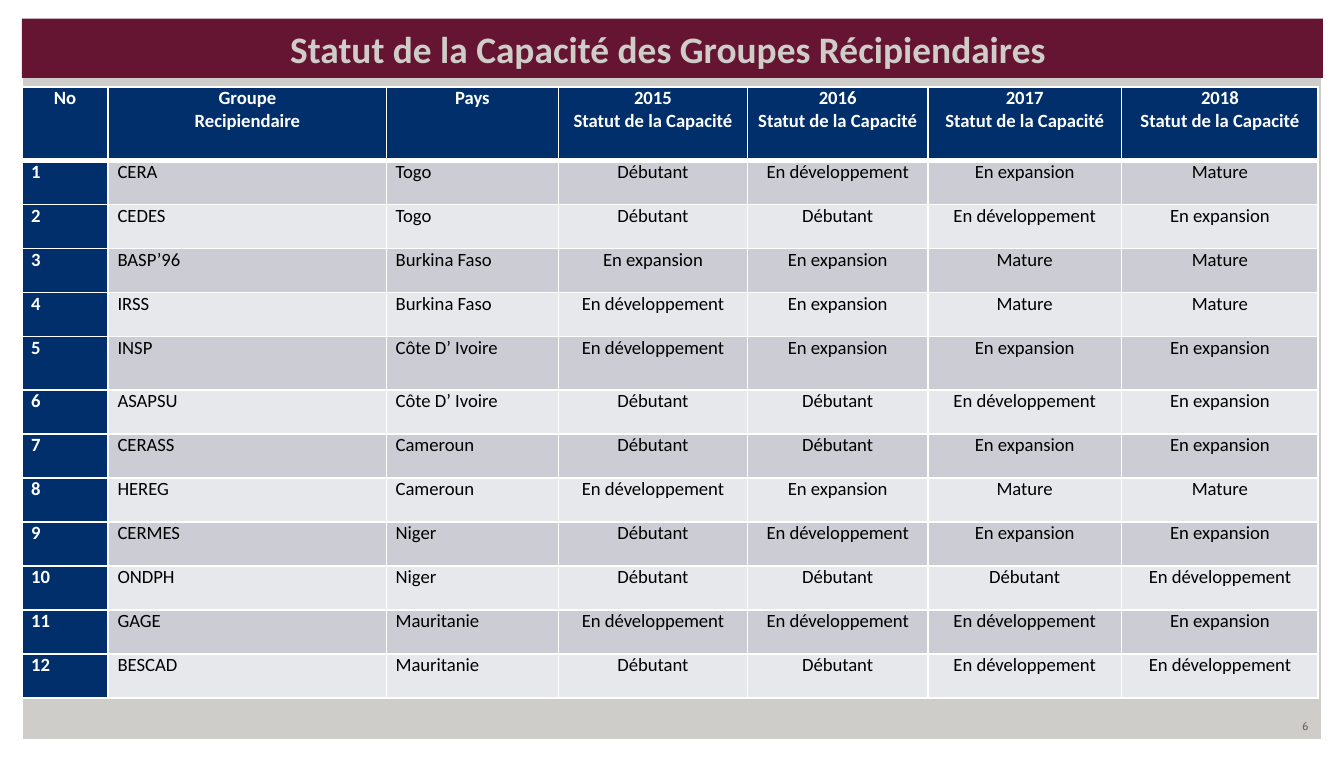
from lxml import etree
from pptx import Presentation
from pptx.dml.color import RGBColor
from pptx.enum import shapes, text
from pptx.oxml.ns import qn
from pptx.util import Pt

NAVY, WHITE, BLACK, SAND = "002F6C", "FFFFFF", "000000", "CFCDC9"
BANDS = ["CCCDD4", "E7E8EB"]
LEFT, CENTER = text.PP_ALIGN.JUSTIFY, text.PP_ALIGN.CENTER
TOP, MIDDLE, BOTTOM = (text.MSO_ANCHOR.TOP, text.MSO_ANCHOR.MIDDLE,
                       text.MSO_ANCHOR.BOTTOM)

D, V, E, M = "Débutant", "En développement", "En expansion", "Mature"
STATUS = "Statut de la Capacité"
HEADER = ["No", "Groupe\nRecipiendaire", "Pays"] + [
    f"{year}\n{STATUS}" for year in range(2015, 2019)]
GROUPS = [
    ("CERA", "Togo", D, V, E, M),
    ("CEDES", "Togo", D, D, V, E),
    ("BASP’96", "Burkina Faso", E, E, M, M),
    ("IRSS", "Burkina Faso", V, E, M, M),
    ("INSP", "Côte D’ Ivoire", V, E, E, E),
    ("ASAPSU", "Côte D’ Ivoire", D, D, V, E),
    ("CERASS", "Cameroun", D, D, E, E),
    ("HEREG", "Cameroun", V, E, M, M),
    ("CERMES", "Niger", D, V, E, E),
    ("ONDPH", "Niger", D, D, D, V),
    ("GAGE", "Mauritanie", V, V, V, E),
    ("BESCAD", "Mauritanie", D, D, V, V),
]


def paint(fill, color):
    fill.solid()
    fill.fore_color.rgb = RGBColor.from_string(color)


def write(tf, content, size=10, color=BLACK, bold=False, font="Calibri",
          align=CENTER, anchor=TOP):
    tf.word_wrap = True
    tf.vertical_anchor = anchor
    tf.text = content
    for p in tf.paragraphs:
        p.alignment = align
        for r in p.runs:
            r.font.name, r.font.size, r.font.bold = font, Pt(size), bold
            r.font.color.rgb = RGBColor.from_string(color)


prs = Presentation()
prs.slide_width, prs.slide_height = Pt(720), Pt(408.24)
s = prs.slides.add_slide(prs.slide_layouts[5])
paint(s.background.fill, SAND)

# White frame, sent behind the title
frame = s.shapes.add_shape(shapes.MSO_SHAPE.FRAME, 0, 0,
                           prs.slide_width, prs.slide_height)
frame.adjustments[0] = 0.03
frame.shadow.inherit = False
paint(frame.fill, WHITE)
frame.line.fill.background()
s.shapes.title.element.addprevious(frame.element)

title = s.shapes.title
title.left, title.top, title.width, title.height = Pt(11.7), Pt(10), Pt(697), Pt(31.7)
paint(title.fill, "651532")
write(title.text_frame, "Statut de la Capacité des Groupes Récipiendaires ",
      size=20, color=SAND, bold=True, anchor=BOTTOM)

# Capacity table
col_widths = [46.3, 149, 92.2, 101.2, 96.7, 103.7, 105.5]
row_heights = [39.4] + [23.57] * 12
row_heights[5] = 28.9
table = s.shapes.add_table(len(row_heights), len(col_widths), Pt(11.7), Pt(46.6),
                           Pt(sum(col_widths)), Pt(sum(row_heights))).table
table.horz_banding = False
for col, width in zip(table.columns, col_widths):
    col.width = Pt(width)
for row, height in zip(table.rows, row_heights):
    row.height = Pt(height)

rows = [HEADER] + [(str(n), *group) for n, group in enumerate(GROUPS, 1)]
for i, row in enumerate(rows):
    for j, content in enumerate(row):
        cell = table.cell(i, j)
        cell.margin_left = cell.margin_right = Pt(5)
        cell.margin_top = cell.margin_bottom = 0
        heading = i == 0 or j == 0
        write(cell.text_frame, content, color=WHITE if heading else BLACK,
              bold=heading, align=CENTER if i == 0 or j > 2 else LEFT)
        tcPr = cell._tc.get_or_add_tcPr()
        for side in ("lnL", "lnR", "lnT", "lnB"):
            thick = (i == 0 and side == "lnB") or (i == 1 and side == "lnT")
            ln = etree.SubElement(tcPr, qn(f"a:{side}"), w=str(Pt(3 if thick else 1)))
            line_fill = etree.SubElement(ln, qn("a:solidFill"))
            etree.SubElement(line_fill, qn("a:srgbClr"), val=WHITE)
        paint(cell.fill, NAVY if heading else BANDS[(i - 1) % 2])

number = s.shapes.add_textbox(Pt(540), Pt(381.6), Pt(168), Pt(14.4))
write(number.text_frame, "6", size=6, color="6C6463", font="Cabin",
      align=text.PP_ALIGN.RIGHT, anchor=MIDDLE)

prs.save("out.pptx")
